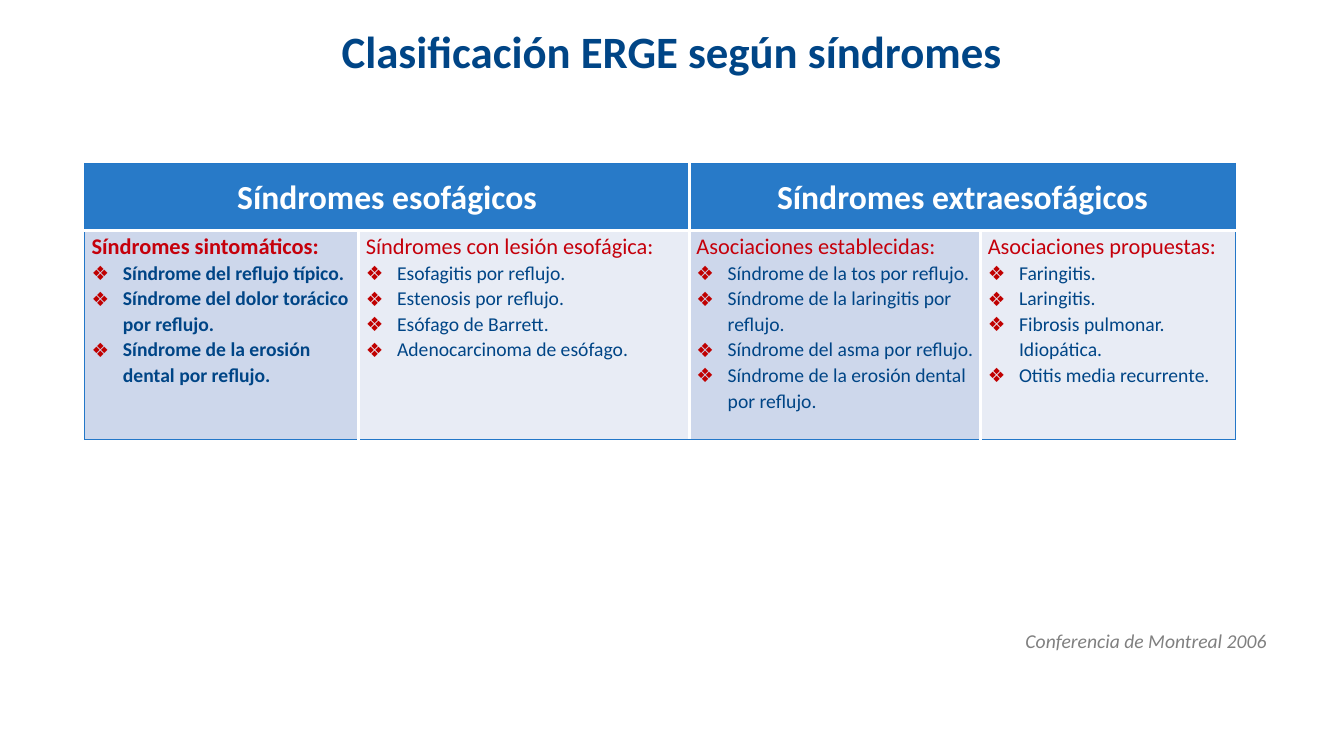
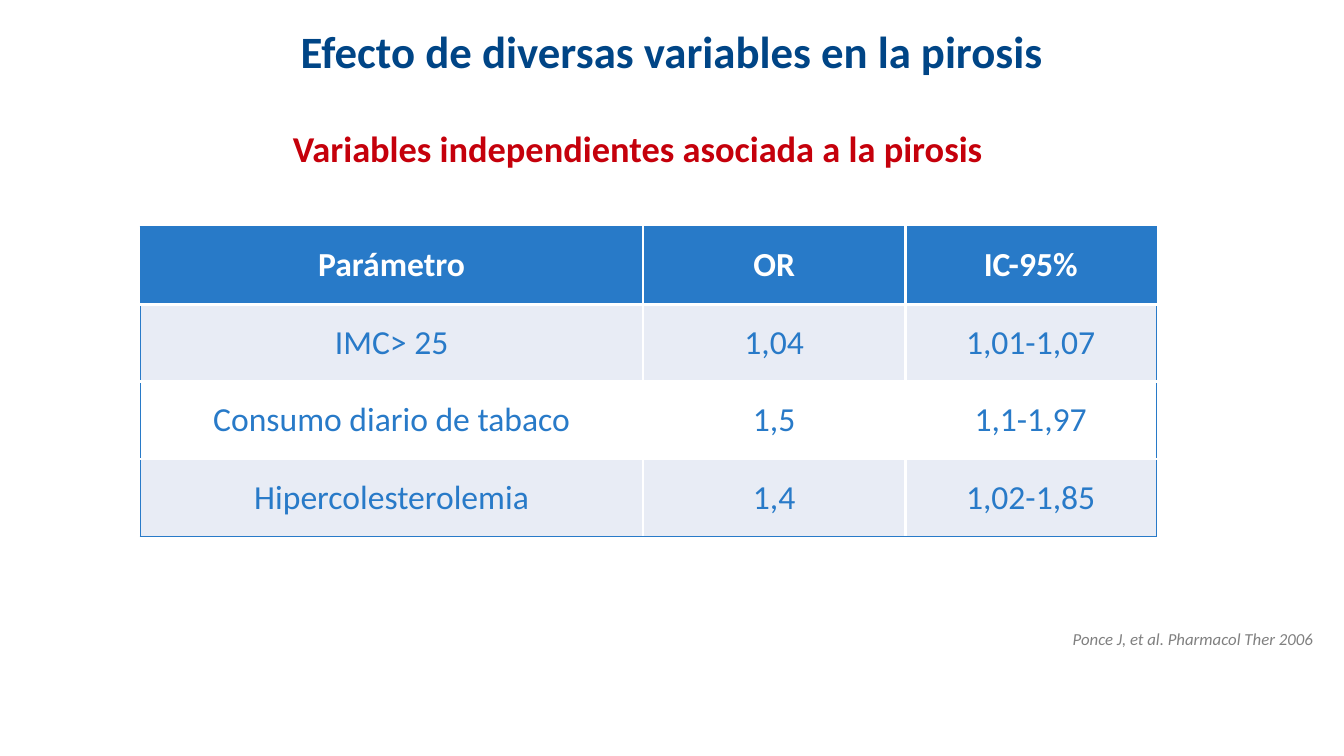
from lxml import etree
from pptx import Presentation
from pptx import util as u
from pptx.dml.color import RGBColor
from pptx.enum import text
from pptx.oxml import ns

FONT = "Calibri"
COLUMNS, ROWS = 40, 45
COLORS = {
    "navy": "004586",
    "red": "C5000B",
    "bullet": "C00000",
    "blue": "287AC8",
    "edge": "2377C8",
    "mist": "CDD7EB",
    "pale": "E8ECF5",
    "gray": "808080",
    "white": "FFFFFF",
}
CENTER = text.PP_ALIGN.CENTER
MIDDLE = text.MSO_ANCHOR.MIDDLE


def rgb(name):
    """Return the named colour."""
    return RGBColor.from_string(COLORS[name])


def add_node(parent, tag, **attributes):
    """Append a DrawingML element and return it."""
    return etree.SubElement(parent, ns.qn(tag), attributes)


def add_bullet(para, symbol, color, indent):
    """Give a paragraph a coloured bullet with a hanging indent."""
    props = para._p.get_or_add_pPr()
    props.set("marL", str(indent))
    props.set("indent", str(-indent))
    add_node(add_node(props, "a:buClr"), "a:srgbClr", val=COLORS[color])
    add_node(props, "a:buFont", typeface="Arial")
    add_node(props, "a:buChar", char=symbol)


def set_borders(cell, borders):
    """Draw the left, right, top and bottom borders of a cell."""
    props = cell._tc.get_or_add_tcPr()
    for side, (color, width) in zip("LRTB", borders):
        line = add_node(props, f"a:ln{side}", w=str(u.Pt(width)))
        add_node(add_node(line, "a:solidFill"), "a:srgbClr", val=COLORS[color])


class Deck:
    """Hold the shared style and the current slide."""

    def __init__(self):
        """Start an empty widescreen presentation."""
        self.show = Presentation()
        self.show.slide_width = u.Inches(13.33)
        self.show.slide_height = u.Inches(7.5)
        self.page = None

    def x(self, columns):
        """Convert grid columns to a length."""
        return round(self.show.slide_width * columns / COLUMNS)

    def y(self, rows):
        """Convert grid rows to a length."""
        return round(self.show.slide_height * rows / ROWS)

    def style(self, para, size, color, bold=False, italic=False, align=None, spacing=None):
        """Format a paragraph and its runs."""
        para.alignment = align
        if spacing:
            para.line_spacing = spacing
        for span in para.runs:
            font = span.font
            font.name, font.size = FONT, u.Pt(size)
            font.bold, font.italic = bold, italic
            font.color.rgb = rgb(color)

    def label(self, words, left, top, width, height, size, color, anchor=MIDDLE, **look):
        """Add one line of text in a box."""
        box = self.page.shapes.add_textbox(
            self.x(left), self.y(top), self.x(width), self.y(height))
        frame = box.text_frame
        frame.word_wrap = True
        frame.vertical_anchor = anchor
        frame.text = words
        self.style(frame.paragraphs[0], size, color, **look)

    def add_page(self, title):
        """Start a slide with its title."""
        self.page = self.show.slides.add_slide(self.show.slide_layouts[6])
        self.label(title, 2, 1, 36, 4, 32, "navy", bold=True, align=CENTER)

    def source(self, words, left, size):
        """Add the source line at the foot."""
        self.label(words, left, 37.14, 38, 1.92, size, "gray", anchor=text.MSO_ANCHOR.TOP,
                   italic=True, align=text.PP_ALIGN.RIGHT)

    def table(self, left, top, widths, heights, headers, tint, edge):
        """Add a framed table with a header row and tinted body cells."""
        count, depth = len(widths), len(heights)
        span = count // len(headers)
        table = self.page.shapes.add_table(
            depth, count, self.x(left), self.y(top),
            self.x(sum(widths)), self.y(sum(heights))).table
        for column, width in zip(table.columns, widths):
            column.width = self.x(width)
        for row, height in zip(table.rows, heights):
            row.height = self.y(height)
        inner = ("white", 2.25)
        for i in range(depth):
            for j in range(count):
                cell = table.cell(i, j)
                last = j + (span if i == 0 and j % span == 0 else 1) >= count
                outside = (j == 0, last, i == 0, i == depth - 1)
                set_borders(cell, [edge if outer else inner for outer in outside])
                cell.fill.solid()
                cell.fill.fore_color.rgb = rgb(tint(i, j) if i else "blue")
        for k, words in enumerate(headers):
            cell = table.cell(0, k * span)
            if span > 1:
                cell.merge(table.cell(0, (k + 1) * span - 1))
            self.cell_text(cell, words, "white", bold=True)
        return table

    def cell_text(self, cell, words, color, bold=False):
        """Write centred text in a table cell."""
        cell.vertical_anchor = MIDDLE
        cell.text_frame.text = words
        self.style(cell.text_frame.paragraphs[0], 24, color, bold=bold, align=CENTER)

    def cell_list(self, cell, heading, items, bold):
        """Write a heading and a bulleted list in a table cell."""
        frame = cell.text_frame
        frame.text = "\n".join([heading, *items])
        first, *others = frame.paragraphs
        self.style(first, 16, "red", bold=bold, spacing=1.07)
        for para in others:
            para.line_spacing = 1.07
            add_bullet(para, "❖", "bullet", u.Inches(0.31))
            self.style(para, 14, "navy", bold=bold)


def build_syndromes(deck):
    """Build the classification slide."""
    groups = {
        "Síndromes sintomáticos:": [
            "Síndrome del reflujo típico.",
            "Síndrome del dolor torácico por reflujo.",
            "Síndrome de la erosión dental por reflujo."],
        "Síndromes con lesión esofágica:": [
            "Esofagitis por reflujo.", "Estenosis por reflujo.",
            "Esófago de Barrett.", "Adenocarcinoma de esófago."],
        "Asociaciones establecidas:": [
            "Síndrome de la tos por reflujo.",
            "Síndrome de la laringitis por reflujo.",
            "Síndrome del asma por reflujo.",
            "Síndrome de la erosión dental por reflujo."],
        "Asociaciones propuestas:": [
            "Faringitis.", "Laringitis.",
            "Fibrosis pulmonar. Idiopática.", "Otitis media recurrente."],
    }
    deck.add_page("Clasificación ERGE según síndromes")
    deck.source("Conferencia de Montreal 2006", 0, 14)
    table = deck.table(
        2.52, 9.72, [8.16, 9.84, 8.67, 7.59], [4.02, 12.4],
        ["Síndromes esofágicos", "Síndromes extraesofágicos"],
        lambda i, j: "pale" if j % 2 else "mist", ("edge", 0.75))
    for cell in table.iter_cells():
        cell.margin_left = cell.margin_right = u.Inches(0.07)
        cell.margin_top = cell.margin_bottom = 0
    for j in (0, 2):
        table.cell(0, j).text_frame.paragraphs[0].line_spacing = 1.07
    for j, (heading, items) in enumerate(groups.items()):
        deck.cell_list(table.cell(1, j), heading, items, bold=j == 0)


def build_variables(deck):
    """Build the heartburn variables slide."""
    records = [
        ("IMC> 25", "1,04", "1,01-1,07"),
        ("Consumo diario de tabaco", "1,5", "1,1-1,97"),
        ("Hipercolesterolemia", "1,4", "1,02-1,85"),
    ]
    deck.add_page("Efecto de diversas variables en la pirosis")
    deck.source("Ponce J, et al. Pharmacol Ther 2006", 1.38, 12)
    table = deck.table(
        4.17, 13.5, [14.97, 7.8, 7.47], [4.61] * (len(records) + 1),
        ["Parámetro", "OR", "IC-95%"],
        lambda i, j: "pale" if i % 2 else "white", ("blue", 1))
    for i, record in enumerate(records, 1):
        for j, words in enumerate(record):
            deck.cell_text(table.cell(i, j), words, "blue")
    deck.label("Variables independientes asociada a la pirosis",
               6.6, 7.38, 24.8, 2.82, 26, "red", bold=True, align=CENTER)


def main():
    """Build and save the deck."""
    deck = Deck()
    build_syndromes(deck)
    build_variables(deck)
    deck.show.save("out.pptx")


if __name__ == "__main__":
    main()
